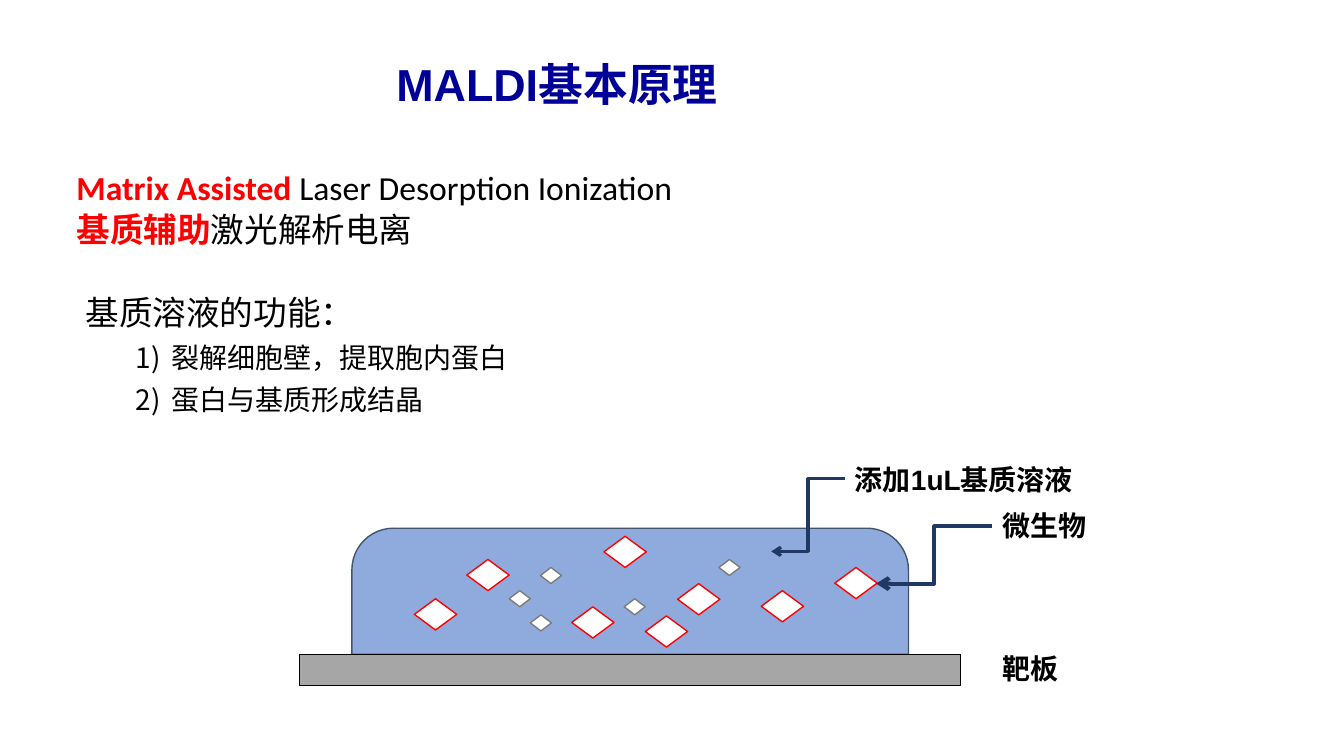
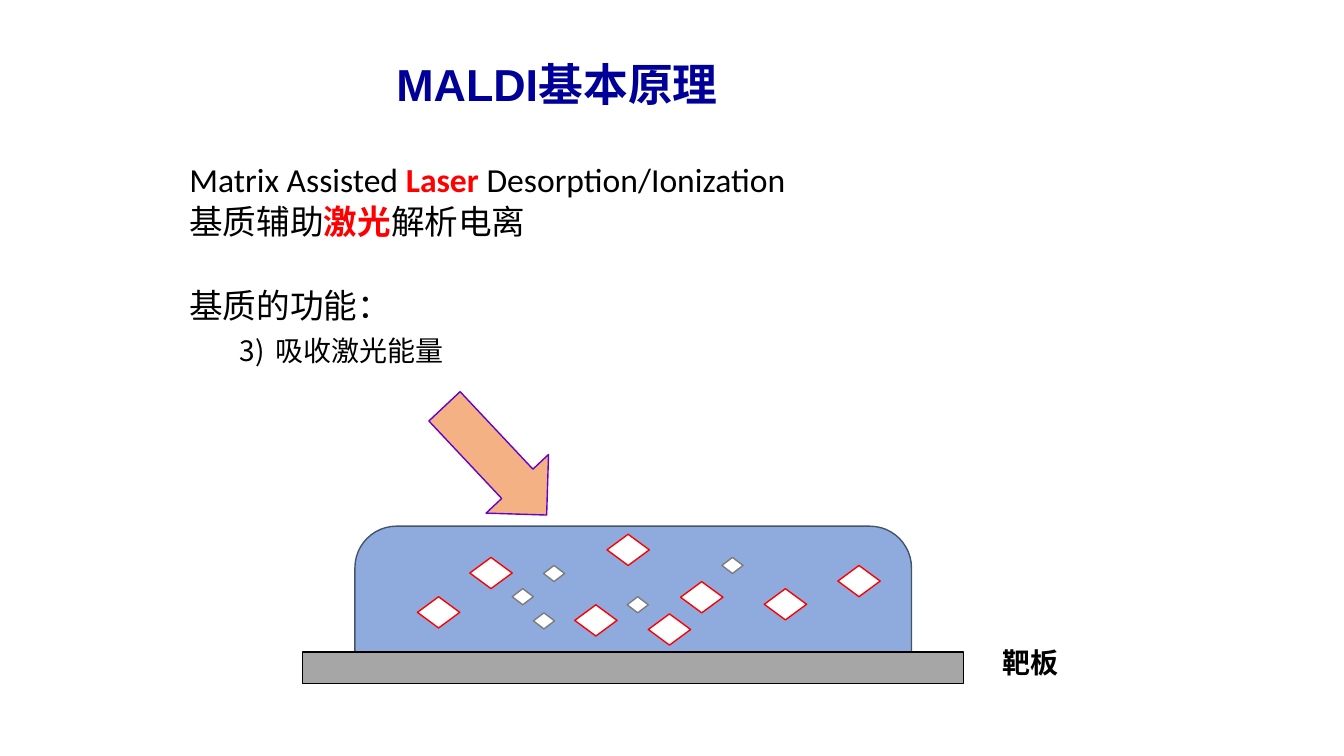
from dataclasses import dataclass

from lxml.etree import SubElement
from pptx import Presentation
from pptx.dml.color import RGBColor
from pptx.enum.shapes import MSO_CONNECTOR, MSO_SHAPE
from pptx.enum.text import MSO_ANCHOR, PP_ALIGN
from pptx.oxml.ns import qn
from pptx.util import Inches, Pt


@dataclass(frozen=True)
class Theme:
    title_color: str = "000099"
    text_color: str = "000000"
    highlight: str = "FF0000"
    droplet: str = "8FAADC"
    droplet_line: str = "44546A"
    plate: str = "A6A6A6"
    crystal: str = "FFFFFF"
    matrix_line: str = "7C7C7C"
    pointer: str = "203864"
    laser: str = "F4B183"
    laser_line: str = "6600CC"
    heading_font: str = "Arial"
    body_font: str = "Calibri"
    title_size: int = 32
    body_size: int = 24
    small_size: int = 20
    line_spacing: int = 30


THEME = Theme()

# Offsets from the top left corner of the sample diagram
MICROBES = [(1.14, 0.7), (1.66, 0.31), (2.7, 0.78), (3.43, 0.87),
            (3.02, 0.08), (5.31, 0.39), (3.75, 0.55), (4.58, 0.62)]
MATRIX_CRYSTALS = [(2.08, 0.62), (2.39, 0.39), (3.22, 0.7), (4.16, 0.31), (2.29, 0.86)]


def set_values(target, values):
    for name, value in values.items():
        setattr(target, name, value)


def inches(values):
    return [Inches(value) for value in values]


def add_run(paragraph, text, font, size, color, bold=False):
    run = paragraph.add_run()
    run.text = text
    set_values(run.font, {"name": font, "size": Pt(size), "bold": bold})
    run.font.color.rgb = RGBColor.from_string(color)


def add_frame(slide, box, **values):
    frame = slide.shapes.add_textbox(*inches(box)).text_frame
    set_values(frame, {"word_wrap": True, **values})
    return frame


def add_title(slide, text):
    frame = add_frame(slide, (0, 0.41, 11.05, 0.84), vertical_anchor=MSO_ANCHOR.MIDDLE)
    paragraph = frame.paragraphs[0]
    paragraph.alignment = PP_ALIGN.CENTER
    add_run(paragraph, text, THEME.heading_font, THEME.title_size, THEME.title_color, True)


def add_label(slide, text, box, wrap=False):
    frame = add_frame(slide, box, word_wrap=wrap)
    add_run(frame.paragraphs[0], text, THEME.heading_font, THEME.small_size,
            THEME.text_color, True)


def next_paragraph(frame, space_before=0):
    """Return the empty first paragraph, or a new one, with body spacing."""
    first = frame.paragraphs[0]
    paragraph = frame.add_paragraph() if first.runs else first
    set_values(paragraph, {"line_spacing": Pt(THEME.line_spacing),
                           "space_before": Pt(space_before)})
    return paragraph


def add_body_line(frame, *parts, space_before=0):
    """Add a line of (text, highlighted) parts."""
    paragraph = next_paragraph(frame, space_before)
    for text, highlighted in parts:
        color = THEME.highlight if highlighted else THEME.text_color
        add_run(paragraph, text, THEME.body_font, THEME.body_size, color, highlighted)


def add_numbered_items(frame, items, start=1):
    for text in items:
        paragraph = next_paragraph(frame)
        add_run(paragraph, text, THEME.body_font, THEME.small_size, THEME.text_color)
        properties = paragraph._p.get_or_add_pPr()
        properties.set("marL", str(Inches(0.85)))
        properties.set("indent", str(Inches(-0.35)))
        SubElement(properties, qn("a:buFont"), typeface=THEME.body_font)
        SubElement(properties, qn("a:buAutoNum"), type="arabicParenR", startAt=str(start))


def add_filled_shape(slide, kind, box, fill, line):
    shape = slide.shapes.add_shape(kind, *inches(box))
    shape.shadow.inherit = False
    shape.fill.solid()
    shape.fill.fore_color.rgb = RGBColor.from_string(fill)
    shape.line.color.rgb = RGBColor.from_string(line)
    shape.line.width = Pt(1)
    return shape


def add_sample_diagram(slide, left, top):
    """Draw the droplet with its crystals on the target plate."""
    droplet = add_filled_shape(slide, MSO_SHAPE.ROUND_2_SAME_RECTANGLE,
                               (left + 0.52, top, 5.52, 1.25),
                               THEME.droplet, THEME.droplet_line)
    droplet.adjustments[0] = 0.33
    add_filled_shape(slide, MSO_SHAPE.RECTANGLE, (left, top + 1.25, 6.56, 0.31),
                     THEME.plate, THEME.text_color)
    for offsets, size, line in ((MICROBES, (0.42, 0.31), THEME.highlight),
                                (MATRIX_CRYSTALS, (0.21, 0.16), THEME.matrix_line)):
        for x, y in offsets:
            add_filled_shape(slide, MSO_SHAPE.DIAMOND, (left + x, top + y, *size),
                             THEME.crystal, line)


def add_pointer(slide, start, end, width):
    connector = slide.shapes.add_connector(MSO_CONNECTOR.ELBOW, *inches(start + end))
    connector.line.color.rgb = RGBColor.from_string(THEME.pointer)
    connector.line.width = Pt(width)
    SubElement(connector.line._get_or_add_ln(), qn("a:tailEnd"), type="arrow")
    SubElement(connector._element.spPr, qn("a:effectLst"))


def add_callouts(slide, left, top):
    """Label the microbes and the matrix, relative to the sample diagram."""
    add_label(slide, "微生物", (left + 6.87, top - 0.24, 1.05, 0.44))
    add_label(slide, "添加1uL基质溶液", (left + 5.41, top - 0.7, 2.47, 0.44), wrap=True)
    add_pointer(slide, (left + 6.87, top - 0.02), (left + 5.72, top + 0.55), 3)
    add_pointer(slide, (left + 5.41, top - 0.49), (left + 4.68, top + 0.23), 2.25)


def add_base(presentation, left, top, plate_label_top):
    """Start a slide with the parts that both slides share."""
    slide = presentation.slides.add_slide(presentation.slide_layouts[6])
    add_title(slide, "MALDI基本原理")
    add_sample_diagram(slide, left, top)
    add_label(slide, "靶板", (9.84, plate_label_top, 0.77, 0.44))
    return slide


def build_matrix_slide(presentation):
    left, top = 2.97, 5.24
    slide = add_base(presentation, left, top, 6.41)
    add_callouts(slide, left, top)
    heading = add_frame(slide, (0.66, 1.59, 12.11, 0.94))
    add_body_line(heading, ("Matrix Assisted ", True), ("Laser Desorption Ionization", False))
    add_body_line(heading, ("基质辅助", True), ("激光解析电离", False))
    functions = add_frame(slide, (0.75, 2.83, 12.02, 1.36))
    add_body_line(functions, ("基质溶液的功能：", False))
    add_numbered_items(functions, ["裂解细胞壁，提取胞内蛋白", "蛋白与基质形成结晶"])


def build_laser_slide(presentation):
    slide = add_base(presentation, 3, 5.22, 6.35)
    laser = add_filled_shape(slide, MSO_SHAPE.DOWN_ARROW, (4.49, 3.83, 0.85, 1.48),
                             THEME.laser, THEME.laser_line)
    laser.rotation = 316.8
    body = add_frame(slide, (1.78, 1.51, 10.45, 2.2))
    add_body_line(body, ("Matrix Assisted ", False), ("Laser", True),
                  (" Desorption/Ionization", False))
    add_body_line(body, ("基质辅助", False), ("激光", True), ("解析电离", False))
    add_body_line(body, ("基质的功能：", False), space_before=THEME.line_spacing)
    add_numbered_items(body, ["吸收激光能量"], start=3)


def main():
    presentation = Presentation()
    set_values(presentation, {"slide_width": Inches(13.33), "slide_height": Inches(7.5)})
    build_matrix_slide(presentation)
    build_laser_slide(presentation)
    presentation.save("out.pptx")


if __name__ == "__main__":
    main()
